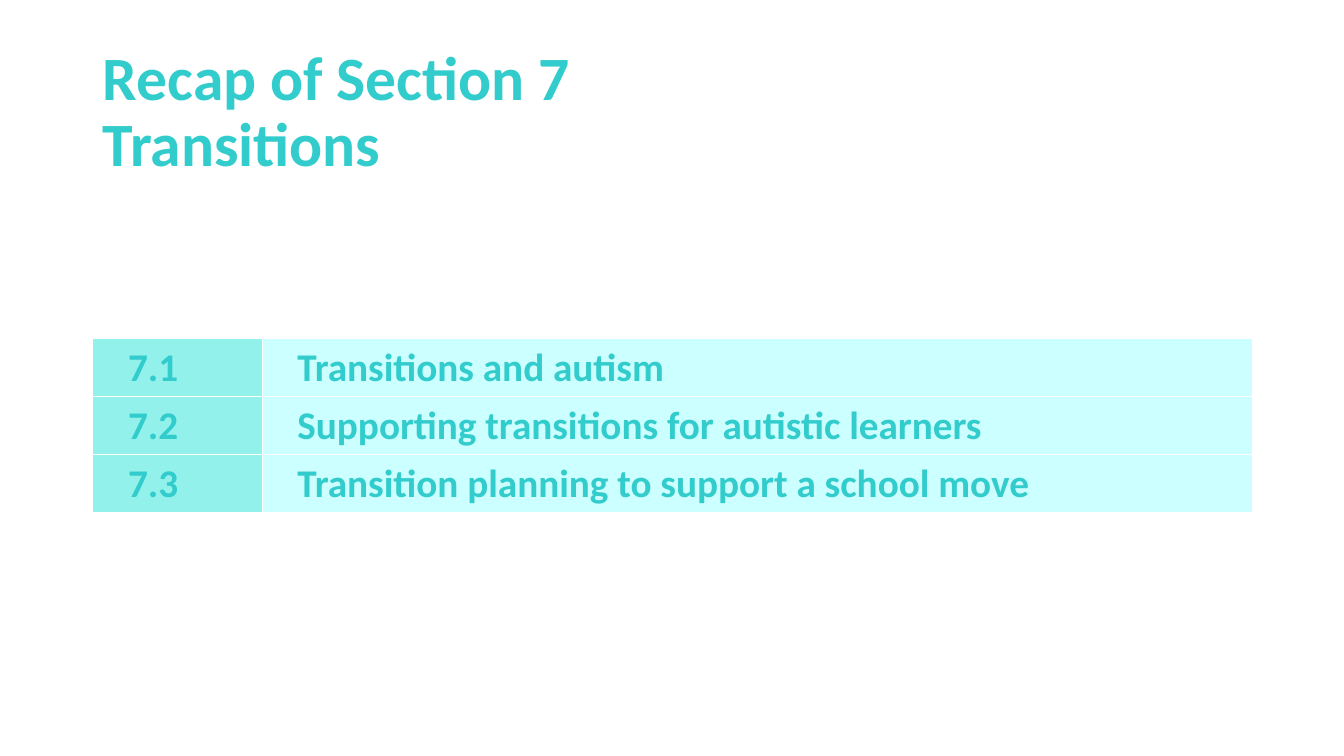
from pptx import Presentation
from pptx.dml.color import RGBColor
from pptx.enum.text import MSO_ANCHOR, PP_ALIGN
from pptx.util import Inches, Pt

# Content
TITLE_LINES = ["Recap of Section 7", "Transitions"]
TOPICS = [
    ("7.1", "Transitions and autism"),
    ("7.2", "Supporting transitions for autistic learners"),
    ("7.3", "Transition planning to support a school move"),
]

# Style and layout
COLORS = {"text": "33CCCC", "number": "92F2EB", "topic": "CCFFFF"}
FONT = "Calibri"
LEFT, WIDTH = 0.92, 11.5
TABLE_TOP, ROW_HEIGHT = 3.36, 0.57
NUMBER_WIDTH = 1.68
INDENT = 0.25


def style(para, size):
    para.alignment = PP_ALIGN.LEFT
    para.font.name = FONT
    para.font.size = Pt(size)
    para.font.bold = True
    para.font.color.rgb = RGBColor.from_string(COLORS["text"])


deck = Presentation()
deck.slide_width, deck.slide_height = Inches(13.33), Inches(7.5)
page = deck.slides.add_slide(deck.slide_layouts[5])

# Title
title = page.shapes.title
title.left, title.top = Inches(LEFT), Inches(0.4)
title.width, title.height = Inches(WIDTH), Inches(1.45)
title.text_frame.text = "\v".join(TITLE_LINES)
title.text_frame.vertical_anchor = MSO_ANCHOR.MIDDLE
heading = title.text_frame.paragraphs[0]
heading.line_spacing = 0.9
style(heading, 44)

# Table of topics, with the white rules of the default table style
table = page.shapes.add_table(
    len(TOPICS), 2, Inches(LEFT), Inches(TABLE_TOP),
    Inches(WIDTH), Inches(ROW_HEIGHT * len(TOPICS))).table
table.first_row = False
table.horz_banding = False
table.columns[0].width = Inches(NUMBER_WIDTH)
table.columns[1].width = Inches(WIDTH - NUMBER_WIDTH)

for row, topic in enumerate(TOPICS):
    for column, (text, fill) in enumerate(zip(topic, ("number", "topic"))):
        cell = table.cell(row, column)
        cell.text = text
        cell.fill.solid()
        cell.fill.fore_color.rgb = RGBColor.from_string(COLORS[fill])
        para = cell.text_frame.paragraphs[0]
        properties = para._p.get_or_add_pPr()
        properties.set("marL", str(Inches(INDENT)))
        properties.set("indent", "0")
        style(para, 28)

deck.save("out.pptx")
